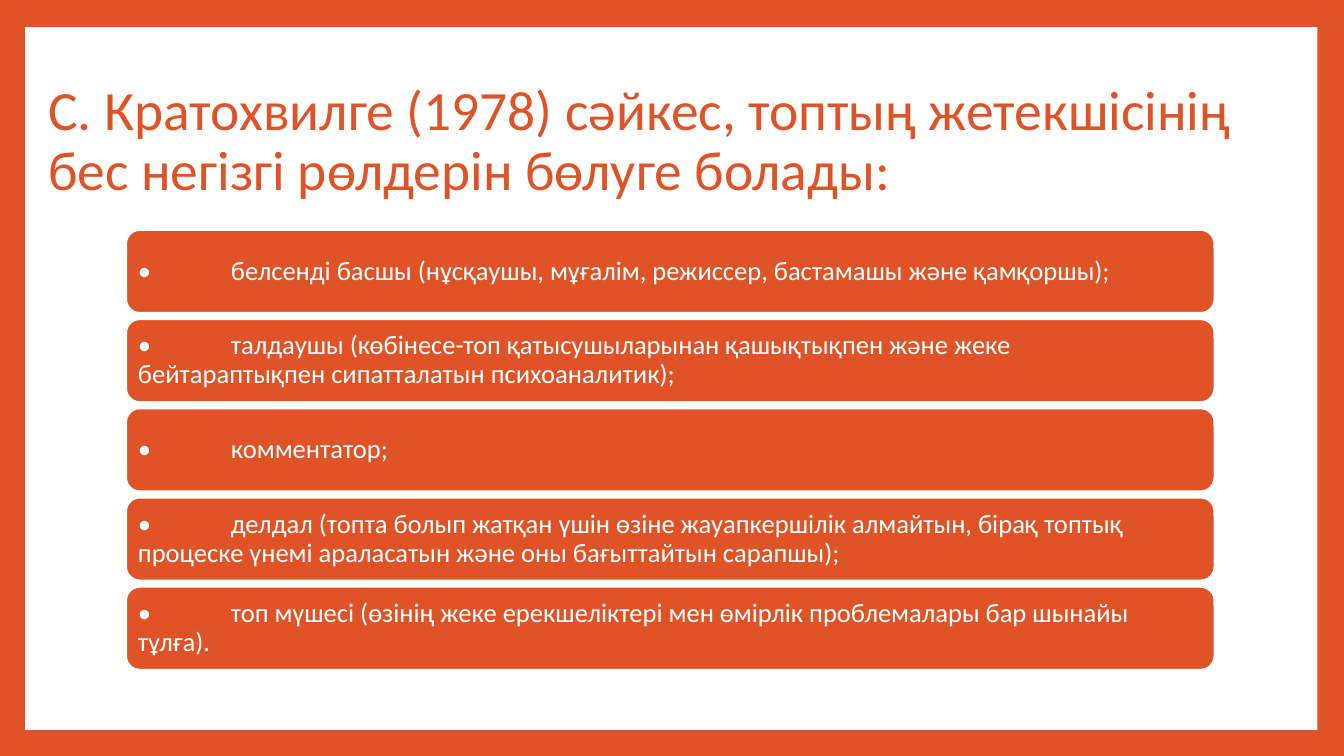
"""Build a slide listing the five roles of a group leader."""
from dataclasses import dataclass

from lxml import etree
from pptx import Presentation
from pptx.dml.color import RGBColor
from pptx.enum import shapes, text
from pptx.oxml import ns
from pptx.util import Pt


@dataclass(frozen=True)
class Theme:
    accent: RGBColor = RGBColor(0xDF, 0x53, 0x27)
    white: RGBColor = RGBColor(0xFF, 0xFF, 0xFF)
    face: str = "Calibri"
    title_size: float = 39.6
    role_size: float = 19


theme = Theme()
roles = [
    "белсенді басшы (нұсқаушы, мұғалім, режиссер, бастамашы және қамқоршы);",
    "талдаушы (көбінесе-топ қатысушыларынан қашықтықпен және жеке бейтараптықпен сипатталатын психоаналитик);",
    "комментатор;",
    "делдал (топта болып жатқан үшін өзіне жауапкершілік алмайтын, бірақ топтық процеске үнемі араласатын және оны бағыттайтын сарапшы);",
    "топ мүшесі (өзінің жеке ерекшеліктері мен өмірлік проблемалары бар шынайы тұлға).",
]


def write(box, words, size, color, tab=None):
    frame = box.text_frame
    frame.word_wrap = True
    frame.vertical_anchor = text.MSO_ANCHOR.MIDDLE
    para = frame.paragraphs[0]
    para.text = words
    para.alignment = text.PP_ALIGN.LEFT
    para.line_spacing = 0.9
    if tab:
        stops = etree.SubElement(para._p.get_or_add_pPr(), ns.qn("a:tabLst"))
        etree.SubElement(stops, ns.qn("a:tab"), pos=str(Pt(tab)), algn="l")
    para.font.name = theme.face
    para.font.size = Pt(size)
    para.font.color.rgb = color


deck = Presentation()
deck.slide_width, deck.slide_height = Pt(960), Pt(540)
page = deck.slides.add_slide(deck.slide_layouts[6])
page.background.fill.solid()
page.background.fill.fore_color.rgb = theme.accent

panel = page.shapes.add_shape(
    shapes.MSO_SHAPE.RECTANGLE, Pt(18), Pt(19.3), Pt(923), Pt(502))
panel.shadow.inherit = False
panel.fill.solid()
panel.fill.fore_color.rgb = theme.white
panel.line.fill.background()

title = page.shapes.add_textbox(Pt(27.4), Pt(48.2), Pt(881.3), Pt(106.6))
write(title, "С. Кратохвилге (1978) сәйкес, топтың жетекшісінің бес негізгі рөлдерін бөлуге болады:",
      theme.title_size, theme.accent)

for row, role in enumerate(roles):
    bar = page.shapes.add_shape(
        shapes.MSO_SHAPE.ROUNDED_RECTANGLE,
        Pt(90), Pt(164.2 + 63.72 * row), Pt(777.6), Pt(59.4))
    bar.shadow.inherit = False
    bar.fill.solid()
    bar.fill.fore_color.rgb = theme.accent
    bar.line.color.rgb = theme.white
    bar.line.width = Pt(1.5)
    frame = bar.text_frame
    frame.margin_left = frame.margin_right = Pt(5.7)
    frame.margin_top = frame.margin_bottom = Pt(5.7)
    write(bar, "•\t" + role, theme.role_size, theme.white, tab=66.4)

deck.save("out.pptx")
